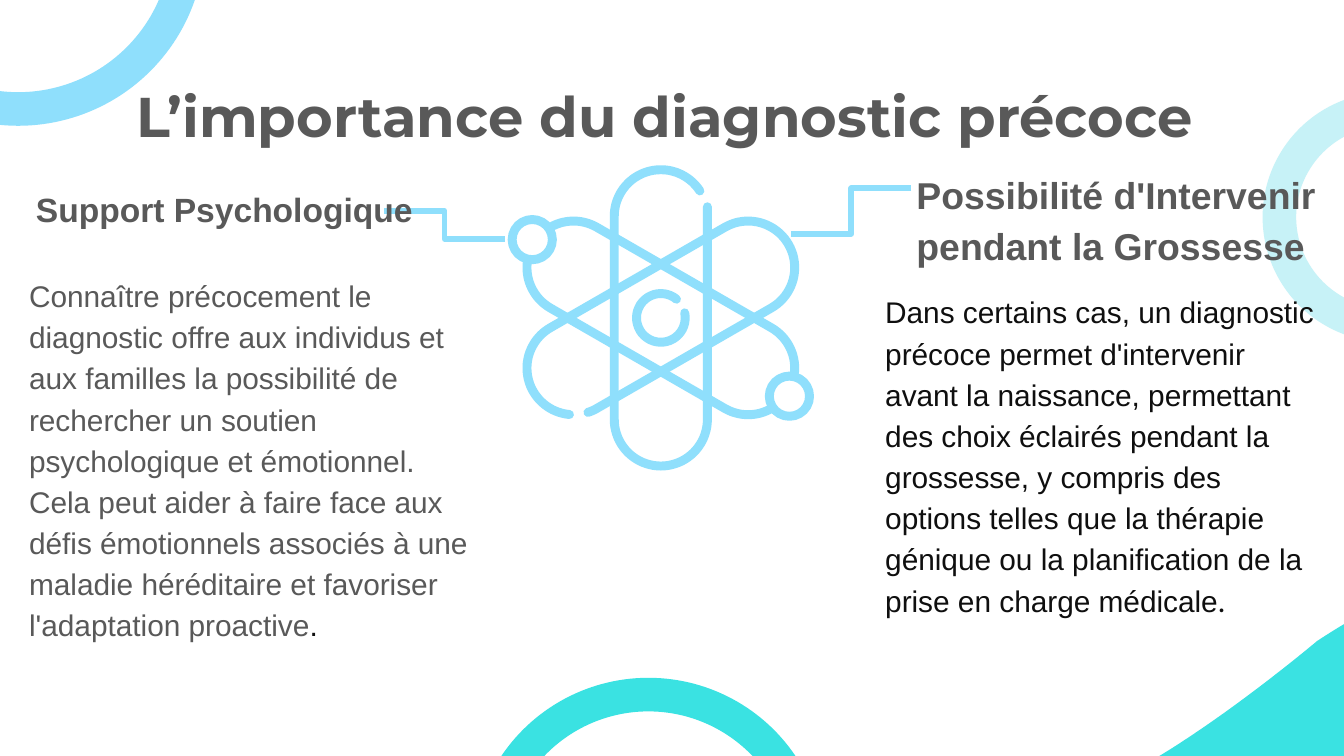
from dataclasses import dataclass
from math import cos, radians, sin

from lxml.etree import SubElement
from pptx import Presentation
from pptx.dml.color import RGBColor
from pptx.enum.shapes import MSO_CONNECTOR, MSO_SHAPE
from pptx.enum.text import PP_ALIGN
from pptx.oxml.ns import qn
from pptx.util import Cm, Pt


@dataclass(frozen=True)
class Theme:
    sky: str = "8FDFFC"
    teal: str = "3AE2E2"
    pale: str = "C7F2F7"
    grey: str = "595959"
    ink: str = "0F0F0F"
    heading_font: str = "Montserrat"
    body_font: str = "Arial"
    stop_font: str = "Lato"
    title_size: int = 30
    large_size: int = 20
    label_size: int = 18
    body_size: int = 16
    ring_width: float = 18
    stroke_width: float = 4.8
    link_width: float = 3


def arc(centre, radius, start, end, steps=40):
    """Points on a circle; angles in degrees, clockwise from the right."""
    x, y = centre
    angles = [radians(start + (end - start) * i / steps) for i in range(steps + 1)]
    return [(x + radius * cos(a), y + radius * sin(a)) for a in angles]


def bezier(points, steps=40):
    """Points on a cubic curve."""
    weights = [((1 - t) ** 3, 3 * t * (1 - t) ** 2, 3 * t * t * (1 - t), t ** 3)
               for t in (i / steps for i in range(steps + 1))]
    return [tuple(sum(w * p[axis] for w, p in zip(row, points)) for axis in (0, 1))
            for row in weights]


class SlideBuilder:
    def __init__(self, slide, theme):
        self.shapes = slide.shapes
        self.theme = theme

    def outline(self, shape, color, width):
        shape.line.color.rgb = RGBColor.from_string(color)
        shape.line.width = Pt(width)

    def ring(self, x, y, diameter, color, width):
        shape = self.shapes.add_shape(
            MSO_SHAPE.OVAL, Cm(x), Cm(y), Cm(diameter), Cm(diameter))
        shape.shadow.inherit = False
        shape.fill.background()
        self.outline(shape, color, width)

    def polygon(self, points, close):
        start, *rest = [(Cm(x), Cm(y)) for x, y in points]
        builder = self.shapes.build_freeform(*start)
        builder.add_line_segments(rest, close=close)
        shape = builder.convert_to_shape()
        shape.shadow.inherit = False
        return shape

    def area(self, points, color):
        shape = self.polygon(points, True)
        shape.fill.solid()
        shape.fill.fore_color.rgb = RGBColor.from_string(color)
        shape.line.fill.background()

    def stroke(self, points):
        shape = self.polygon(points, False)
        shape.fill.background()
        self.outline(shape, self.theme.sky, self.theme.stroke_width)
        shape.line._get_or_add_ln().set("cap", "rnd")

    def link(self, start, end):
        ends = [Cm(value) for value in (*start, *end)]
        connector = self.shapes.add_connector(MSO_CONNECTOR.ELBOW, *ends)
        self.outline(connector, self.theme.sky, self.theme.link_width)
        SubElement(connector._element.spPr, qn("a:effectLst"))

    def text(self, frame, spans, **layout):
        box = self.shapes.add_textbox(*[Cm(value) for value in frame])
        body = box.text_frame
        body.word_wrap = True
        for side in ("left", "top", "right", "bottom"):
            setattr(body, f"margin_{side}", Cm(0.25))
        para = body.paragraphs[0]
        for name, value in layout.items():
            setattr(para, name, value)
        for words, font, size, color, bold in spans:
            span = para.add_run()
            span.text = words
            span.font.color.rgb = RGBColor.from_string(color)
            style = {"name": font, "size": Pt(size), "bold": bold}
            for name, value in style.items():
                setattr(span.font, name, value)

    def atom(self, x, y):
        radius = 0.88
        top, bottom = (x, y - 1.92), (x, y + 1.92)
        (upper_left, upper_right), (lower_left, lower_right) = [
            [(x + dx, y + dy) for dx in (-1.65, 1.65)] for dy in (-0.95, 0.95)]

        # Orbits: the upright one, the rising one, and both halves of the falling one
        self.stroke(arc(top, radius, -33, -180) + arc(bottom, radius, 180, 0)
                    + [(x + radius, top[1] - 0.18)])
        self.stroke(arc(lower_left, radius, 95, 240) + arc(upper_right, radius, 240, 420)
                    + arc(lower_left, radius, 60, 72))
        for near, far, turn in ((upper_left, lower_right, 0),
                                (lower_right, upper_left, 180)):
            self.stroke(arc(near, radius, turn - 117, turn - 60)
                        + arc(far, radius, turn - 60, turn + 6))

        # Electrons and nucleus
        electron = 0.38
        for side in (-1, 1):
            self.ring(x + side * 2.43 - electron, y + side * 1.48 - electron,
                      2 * electron, self.theme.sky, self.theme.stroke_width)
        self.stroke(arc((x, y), 0.46, -50, -372))


def main():
    theme = Theme()
    deck = Presentation()
    deck.slide_width, deck.slide_height = Cm(25.4), Cm(14.29)
    page = SlideBuilder(deck.slides.add_slide(deck.slide_layouts[6]), theme)

    # Background decoration
    corner = bezier([(29.59, 11.1), (28.09, 10.74), (24.89, 12.12), (20.45, 15.01)])
    if_curve = [(29.59, 11.1), (28.09, 10.74), (26.98, 10.74), (24.89, 12.12)]
    corner = bezier(if_curve) + bezier(
        [(24.89, 12.12), (24.89, 12.12), (22.1, 14.48), (20.45, 15.01)])
    page.area(corner + [(29.59, 15.01)], theme.teal)
    for x, y, diameter, color in ((9.22, 13.13, 6.07, theme.teal),
                                  (24.18, 2.06, 4.09, theme.pale),
                                  (-2.87, -4.37, 6.43, theme.sky)):
        page.ring(x, y, diameter, color, theme.ring_width)

    # Title
    page.text((1.77, 1.3, 21.59, 1.6),
              [("L’importance du diagnostic précoce", theme.heading_font,
                theme.title_size, theme.grey, True)],
              alignment=PP_ALIGN.CENTER)

    # Body texts
    page.text((0.3, 4.9, 9.02, 2.9), [
        ("Connaître précocement le diagnostic offre aux individus et aux familles "
         "la possibilité de rechercher un soutien psychologique et émotionnel. Cela "
         "peut aider à faire face aux défis émotionnels associés à une maladie "
         "héréditaire et favoriser l'adaptation proactive",
         theme.body_font, theme.body_size, theme.grey, False),
        (".", theme.body_font, theme.body_size, theme.ink, False)],
        line_spacing=1.15)
    page.text((16.48, 5.21, 8.69, 2.9), [
        ("Dans certains cas, un diagnostic précoce permet d'intervenir avant la "
         "naissance, permettant des choix éclairés pendant la grossesse, y compris "
         "des options telles que la thérapie génique ou la planification de la "
         "prise en charge médicale",
         theme.body_font, theme.body_size, theme.ink, False),
        (".", theme.stop_font, theme.body_size, theme.ink, False)],
        line_spacing=1.15)

    # Atom and its links to the headings
    page.atom(12.49, 6.01)
    page.link((17.22, 3.56), (14.96, 4.42))
    page.link((7.26, 3.99), (9.55, 4.52))

    # Headings
    for frame, words, size in (
            ((0.43, 3.2, 8.43, 1.14), "Support Psychologique", theme.label_size),
            ((17.07, 2.87, 9.63, 1.14),
             "Possibilité d'Intervenir pendant la Grossesse", theme.large_size)):
        page.text(frame, [(words, theme.body_font, size, theme.grey, True)],
                  line_spacing=1.15)

    deck.save("out.pptx")


if __name__ == "__main__":
    main()
